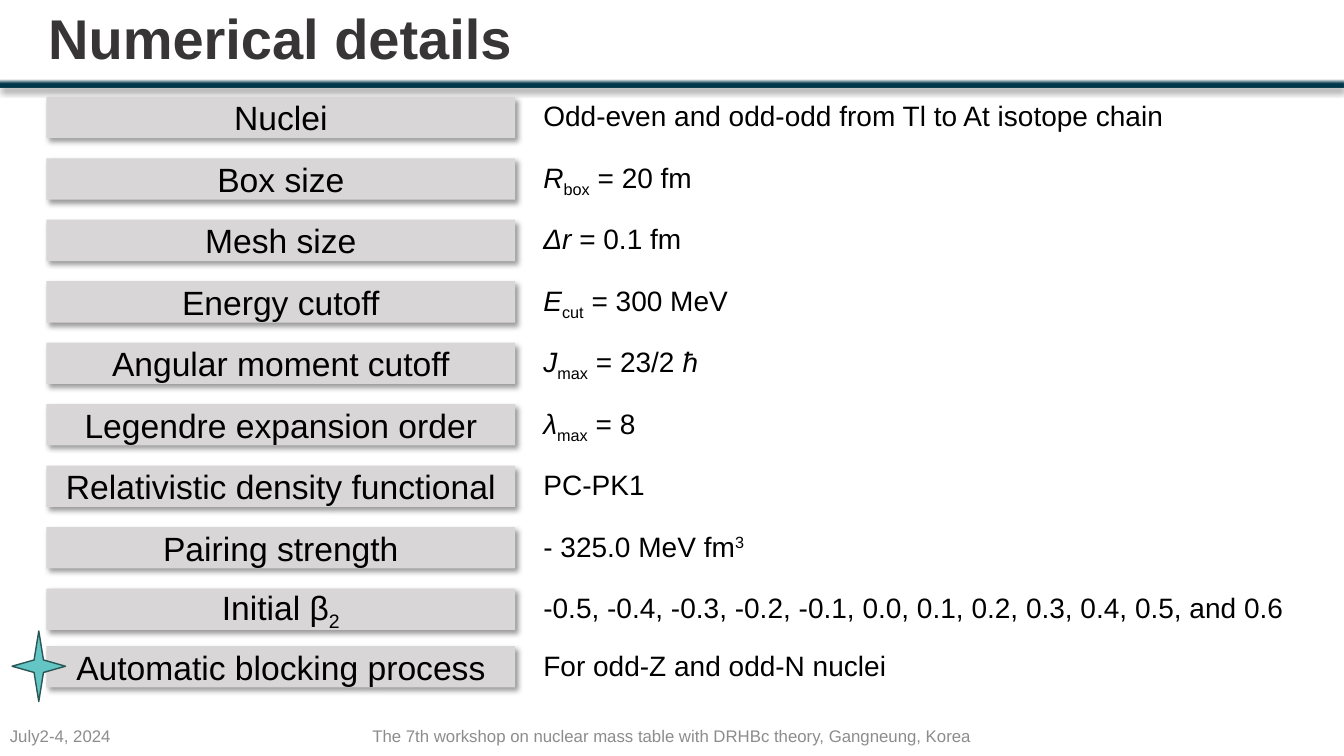
from lxml import etree
from pptx import Presentation
from pptx.dml.color import RGBColor
from pptx.enum.shapes import MSO_SHAPE
from pptx.enum.text import MSO_ANCHOR, MSO_AUTO_SIZE, PP_ALIGN
from pptx.oxml import parse_xml
from pptx.oxml.ns import nsdecls, qn
from pptx.util import Inches, Pt

RECTANGLE, STAR = MSO_SHAPE.RECTANGLE, MSO_SHAPE.STAR_4_POINT
LEFT, CENTER = PP_ALIGN.LEFT, PP_ALIGN.CENTER
TOP, MIDDLE = MSO_ANCHOR.TOP, MSO_ANCHOR.MIDDLE
FIT_SHAPE = MSO_AUTO_SIZE.SHAPE_TO_FIT_TEXT

TITLE = "Numerical details"
DATE = "July2-4, 2024"
VENUE = "The 7th workshop on nuclear mass table with DRHBc theory, Gangneung, Korea"
PARAMETERS = [
    ([("Nuclei", "")],
     [("Odd-even and odd-odd from Tl to At isotope chain", "")], 6.39),
    ([("Box size", "")],
     [("R", "italic"), ("box", "sub"), (" = 20 fm", "")], 1.72),
    ([("Mesh size", "")],
     [("Δr", "italic"), (" = 0.1 fm", "")], 1.58),
    ([("Energy cutoff", "")],
     [("E", "italic"), ("cut", "sub"), (" = 300 MeV", "")], 2.08),
    ([("Angular moment cutoff", "")],
     [("J", "italic"), ("max", "sub"), (" = 23/2 ", ""), ("ħ", "italic")], 1.79),
    ([("Legendre expansion order", "")],
     [("λ", "italic"), ("max", "sub"), (" = 8", "")], 1.17),
    ([("Relativistic density functional", "")],
     [("PC-PK1", "")], 1.22),
    ([("Pairing strength", "")],
     [("- 325.0 MeV fm", ""), ("3", "sup")], 2.22),
    ([("Initial β", ""), ("2", "sub")],
     [("-0.5, -0.4, -0.3, -0.2, -0.1, 0.0, 0.1, 0.2, 0.3, 0.4, 0.5, and 0.6", "")], 7.58),
    ([("Automatic blocking process", "")],
     [("For odd-Z and odd-N nuclei", "")], 3.71),
]

FONT = "Arial"
BLACK, DARK, GREY = "000000", "373535", "8C8C8C"
PLATE, NAVY, TEAL, TEAL_EDGE = "D8D6D6", "00384A", "63C5C4", "2B5656"
BASELINES = {"sub": "-25000", "sup": "30000"}

SLIDE_W, SLIDE_H = 13.33, 7.5
LABEL_X, LABEL_W, LABEL_H = 0.46, 4.65, 0.41
VALUE_X, VALUE_H, VALUE_RISE = 5.29, 0.44, 0.03
FIRST_ROW, ROW_PITCH, LAST_ROW_RISE = 0.96, 0.61, 0.04
FOOTER_Y, FOOTER_H = 7.1, 0.4


def color(hex_code):
    """Turn a hex string into a colour."""
    return RGBColor.from_string(hex_code)


def write(shape, runs, size, ink=BLACK, align=LEFT, anchor=MIDDLE, bold=None):
    """Fill a shape with styled runs."""
    frame = shape.text_frame
    frame.word_wrap = True
    frame.vertical_anchor = anchor
    paragraph = frame.paragraphs[0]
    paragraph.alignment = align
    for text, style in runs:
        run = paragraph.add_run()
        run.text = text
        run.font.name, run.font.size, run.font.bold = FONT, Pt(size), bold
        run.font.color.rgb = color(ink)
        if style == "italic":
            run.font.italic = True
        elif style in BASELINES:
            run._r.get_or_add_rPr().set("baseline", BASELINES[style])
    return paragraph


def add_text(slide, box, runs, size, **look):
    """Add a text box and return it with its paragraph."""
    text_box = slide.shapes.add_textbox(*map(Inches, box))
    return text_box, write(text_box, runs, size, **look)


def add_plain(slide, kind, box, fill):
    """Add a filled shape with no outline and no shadow."""
    shape = slide.shapes.add_shape(kind, *map(Inches, box))
    shape.shadow.inherit = False
    shape.fill.solid()
    shape.fill.fore_color.rgb = color(fill)
    shape.line.fill.background()
    return shape


def cast_shadow(shape, degrees):
    """Give a shape a soft outer shadow."""
    effects = shape._element.spPr.find(qn("a:effectLst"))
    shadow = etree.SubElement(effects, qn("a:outerShdw"), blurRad=str(Pt(4)),
                              dist=str(Pt(3)), dir=str(degrees * 60000),
                              algn="tl", rotWithShape="0")
    tint = etree.SubElement(shadow, qn("a:srgbClr"), val=BLACK)
    etree.SubElement(tint, qn("a:alpha"), val="40000")


def add_header(slide):
    """Draw the fading rule and the title."""
    rule = add_plain(slide, RECTANGLE, (0, 0.79, SLIDE_W, 0.08), NAVY)
    solid = rule._element.spPr.find(qn("a:solidFill"))
    solid.getparent().replace(solid, parse_xml(
        f'<a:gradFill {nsdecls("a")} rotWithShape="1"><a:gsLst>'
        f'<a:gs pos="50000"><a:srgbClr val="{NAVY}"/></a:gs>'
        f'<a:gs pos="100000"><a:srgbClr val="{NAVY}"><a:alpha val="0"/></a:srgbClr></a:gs>'
        '</a:gsLst><a:lin ang="16200000" scaled="0"/></a:gradFill>'))
    cast_shadow(rule, 90)
    _, heading = add_text(slide, (0.38, 0, 12.62, 0.83), [(TITLE, "")], 40,
                          ink=DARK, bold=True)
    heading.line_spacing = 0.9


def add_parameters(slide):
    """Draw one label plate and one value per row."""
    last = len(PARAMETERS) - 1
    for row, (label, value, width) in enumerate(PARAMETERS):
        top = FIRST_ROW + row * ROW_PITCH - (LAST_ROW_RISE if row == last else 0)
        plate = add_plain(slide, RECTANGLE, (LABEL_X, top, LABEL_W, LABEL_H), PLATE)
        cast_shadow(plate, 45)
        write(plate, label, 24, align=CENTER)
        box = (VALUE_X, top - VALUE_RISE, width, VALUE_H)
        entry, _ = add_text(slide, box, value, 20, anchor=TOP)
        entry.text_frame.word_wrap = False
        entry.text_frame.auto_size = FIT_SHAPE


def add_footer(slide):
    """Write the date and the venue."""
    add_text(slide, (0, FOOTER_Y, 3, FOOTER_H), [(DATE, "")], 12, ink=GREY)
    add_text(slide, (3.37, FOOTER_Y, 6.59, FOOTER_H), [(VENUE, "")], 12,
             ink=GREY, align=CENTER)


def main():
    """Build the slide and save it."""
    deck = Presentation()
    deck.slide_width, deck.slide_height = Inches(SLIDE_W), Inches(SLIDE_H)
    slide = deck.slides.add_slide(deck.slide_layouts[6])
    add_header(slide)
    add_parameters(slide)
    add_footer(slide)
    star = add_plain(slide, STAR, (0.12, 6.26, 0.53, 0.7), TEAL)
    star.line.color.rgb = color(TEAL_EDGE)
    star.line.width = Pt(1)
    deck.save("out.pptx")


if __name__ == "__main__":
    main()
